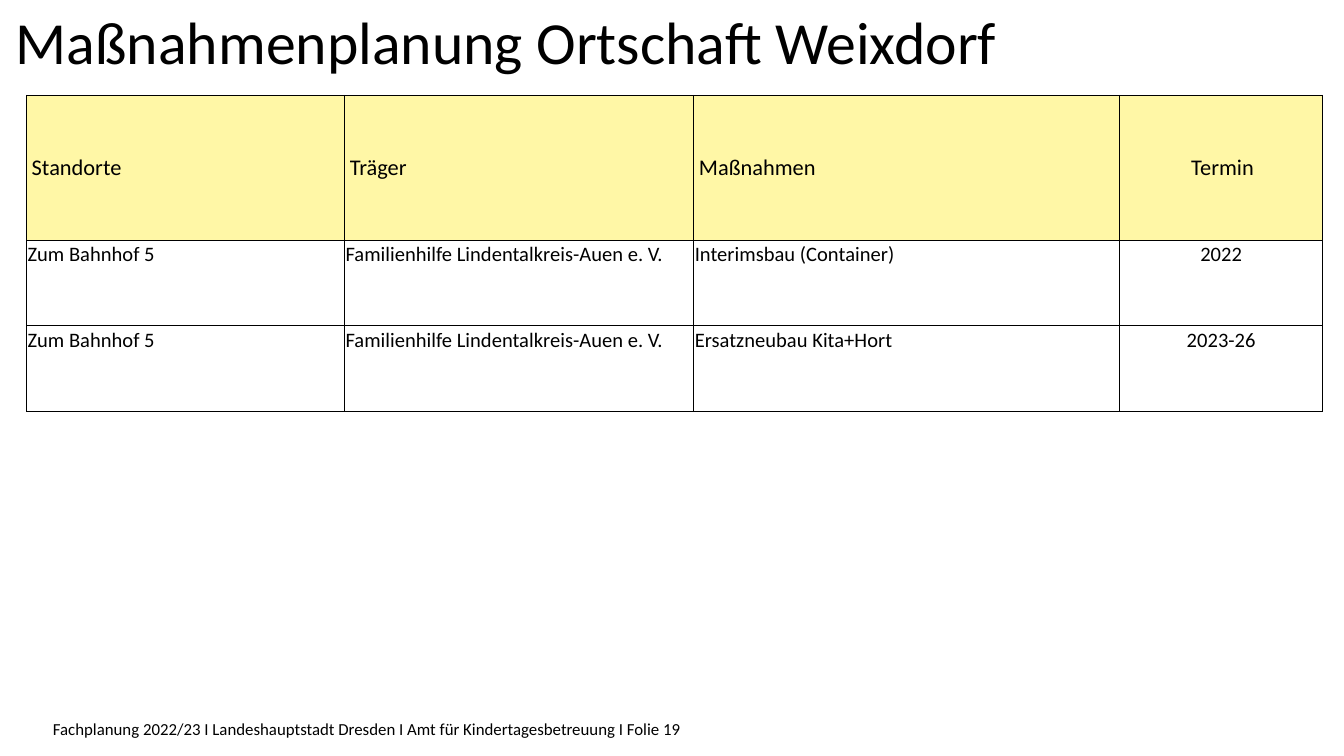
from lxml import etree
from pptx import Presentation
from pptx.dml.color import RGBColor
from pptx.enum.text import MSO_ANCHOR, PP_ALIGN
from pptx.oxml.ns import qn
from pptx.util import Cm, Pt

LEFT, CENTER = PP_ALIGN.LEFT, PP_ALIGN.CENTER
TOP, MIDDLE = MSO_ANCHOR.TOP, MSO_ANCHOR.MIDDLE
FONT = "Calibri"
COLORS = {"text": "000000", "border": "000000", "header": "FFF7A6", "background": "FFFFFF"}
SLIDE_WIDTH, SLIDE_HEIGHT = 25.4, 14.29
COLUMN_WIDTHS = [6.01, 6.6, 8.05, 3.84]
HEADER_HEIGHT, BODY_HEIGHT = 2.74, 1.62
HEADER_MARGINS = (0.1, 0.05, 0.05, 0.05)
BODY_MARGINS = (0.02, 0.03, 0.02, 0)
TITLE = "Maßnahmenplanung Ortschaft Weixdorf"
FOOTER = "Fachplanung 2022/23 I Landeshauptstadt Dresden I Amt für Kindertagesbetreuung I Folie 19"
LOCATION = "Zum Bahnhof 5"
OPERATOR = "Familienhilfe Lindentalkreis-Auen e. V."
MEASURES = [
    ["Standorte", "Träger", "Maßnahmen", "Termin"],
    [LOCATION, OPERATOR, "Interimsbau (Container)", "2022"],
    [LOCATION, OPERATOR, "Ersatzneubau Kita+Hort", "2023-26"],
]


def color(name):
    """Return the named palette colour."""
    return RGBColor.from_string(COLORS[name])


def set_margins(target, margins):
    """Set left, top, right and bottom margins in centimetres."""
    for side, margin in zip(("left", "top", "right", "bottom"), margins):
        setattr(target, f"margin_{side}", Cm(margin))


def write_text(frame, text, size, alignment=LEFT):
    """Write one styled paragraph into a text frame."""
    frame.word_wrap = True
    paragraph = frame.paragraphs[0]
    paragraph.text = text
    paragraph.alignment = alignment
    paragraph.font.name = FONT
    paragraph.font.size = Pt(size)
    paragraph.font.color.rgb = color("text")


def add_text_band(slide, box, text, size, margins):
    """Add a line of text in the given box."""
    shape = slide.shapes.add_textbox(*map(Cm, box))
    set_margins(shape.text_frame, margins)
    write_text(shape.text_frame, text, size)


def add_borders(cell):
    """Draw a thin line on all four sides of a cell."""
    properties = cell._tc.get_or_add_tcPr()
    for index, side in enumerate(("lnL", "lnR", "lnT", "lnB")):
        line = etree.Element(qn(f"a:{side}"), w=str(Pt(0.5)))
        fill = etree.SubElement(line, qn("a:solidFill"))
        etree.SubElement(fill, qn("a:srgbClr"), val=COLORS["border"])
        properties.insert(index, line)


def style_cell(cell, text, is_header, alignment):
    """Fill in one header or body cell."""
    if is_header:
        cell.fill.solid()
        cell.fill.fore_color.rgb = color("header")
    else:
        cell.fill.background()
    cell.vertical_anchor = MIDDLE if is_header else TOP
    set_margins(cell, HEADER_MARGINS if is_header else BODY_MARGINS)
    write_text(cell.text_frame, text, 12 if is_header else 11, alignment)
    add_borders(cell)


def add_measures_table(slide, left, top):
    """Add the table of measures at the given corner."""
    heights = [HEADER_HEIGHT] + [BODY_HEIGHT] * (len(MEASURES) - 1)
    box = (left, top, sum(COLUMN_WIDTHS), sum(heights))
    table = slide.shapes.add_table(len(heights), len(COLUMN_WIDTHS), *map(Cm, box)).table
    table.horz_banding = False
    table.first_row = False
    for column, width in zip(table.columns, COLUMN_WIDTHS):
        column.width = Cm(width)
    last_column = len(COLUMN_WIDTHS) - 1
    for row_index, (values, height) in enumerate(zip(MEASURES, heights)):
        table.rows[row_index].height = Cm(height)
        for column_index, text in enumerate(values):
            alignment = CENTER if column_index == last_column else LEFT
            style_cell(table.cell(row_index, column_index), text, row_index == 0, alignment)


def main():
    """Build and save the presentation."""
    presentation = Presentation()
    presentation.slide_width = Cm(SLIDE_WIDTH)
    presentation.slide_height = Cm(SLIDE_HEIGHT)
    slide = presentation.slides.add_slide(presentation.slide_layouts[6])
    slide.background.fill.solid()
    slide.background.fill.fore_color.rgb = color("background")
    add_text_band(slide, (0, 13.59, SLIDE_WIDTH, 0.61), FOOTER, 9, (1, 0, 1, 0))
    add_text_band(slide, (0, 0, SLIDE_WIDTH, 2.2), TITLE, 32, (0.3, 0.1, 1.6, 0.13))
    add_measures_table(slide, 0.5, 1.8)
    presentation.save("out.pptx")


if __name__ == "__main__":
    main()
